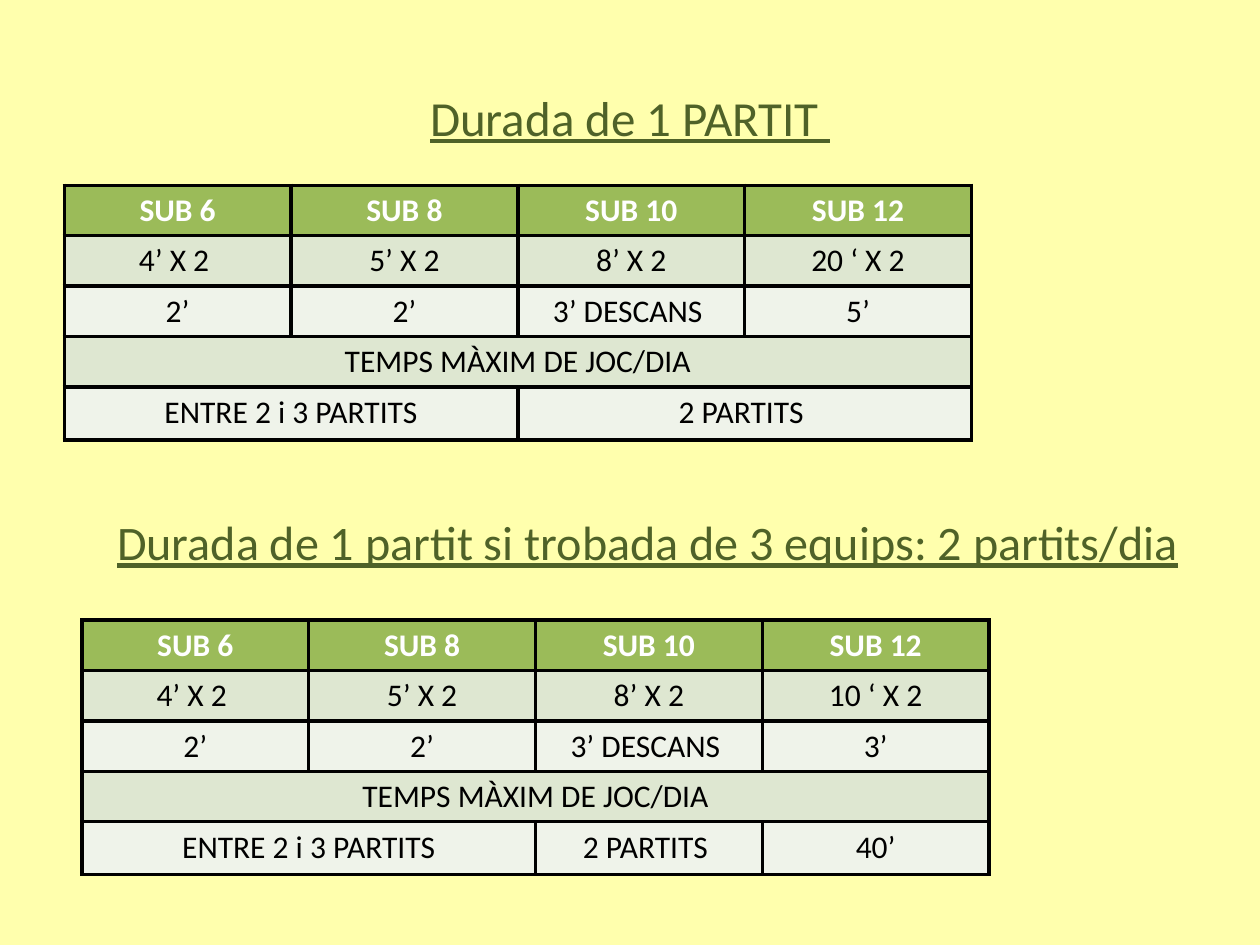
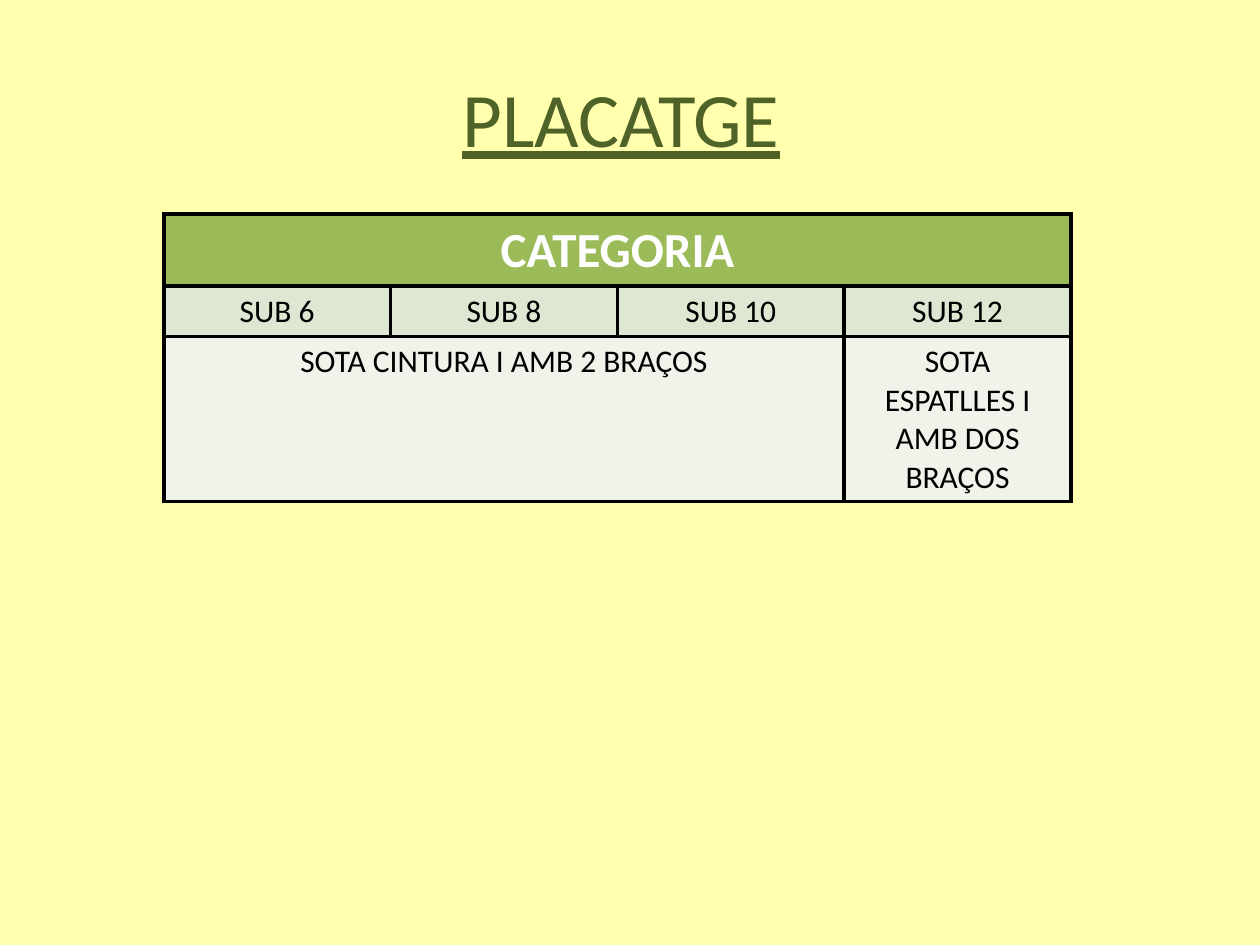
from dataclasses import dataclass

from lxml import etree
from pptx import Presentation
from pptx.dml.color import RGBColor
from pptx.enum.text import MSO_ANCHOR, PP_ALIGN
from pptx.oxml.ns import qn
from pptx.util import Inches, Pt

CENTER = PP_ALIGN.CENTER
MIDDLE = MSO_ANCHOR.MIDDLE

FONT = "Calibri"
BACKGROUND = "FFFFAD"
TITLE_COLOR = "4F6228"
HEADER_FILL = "9BBB59"
BAND_FILLS = ("EFF3EA", "DEE7D1")  # even rows, odd rows
HEADER_TEXT = "FFFFFF"
BODY_TEXT = "000000"
BORDER_COLOR = "000000"
BORDER_WIDTH = 2.25
BODY_SIZE = 18
COLUMN_WIDTH = 1.8

CATEGORIES = ["SUB 6", "SUB 8", "SUB 10", "SUB 12"]
Row = list[str | None]  # None continues the cell on its left


@dataclass
class Heading:
    text: str
    left: float
    top: float
    size: float


@dataclass
class Grid:
    left: float
    top: float
    row_heights: list[float]
    rows: list[Row]
    header_size: float = BODY_SIZE


def rgb(color: str) -> RGBColor:
    return RGBColor.from_string(color)


def style_paragraph(paragraph, size: float, color: str, bold: bool = False, underline: bool = False) -> None:
    paragraph.alignment = CENTER
    font = paragraph.font
    font.name = FONT
    font.size = Pt(size)
    font.bold = bold
    font.underline = underline
    font.color.rgb = rgb(color)


def add_heading(slide, heading: Heading) -> None:
    shape = slide.shapes.add_textbox(Inches(heading.left), Inches(heading.top), Inches(9), Inches(1.25))
    frame = shape.text_frame
    frame.word_wrap = True
    frame.vertical_anchor = MIDDLE
    frame.text = heading.text
    style_paragraph(frame.paragraphs[0], heading.size, TITLE_COLOR, underline=True)


def add_borders(cell) -> None:
    properties = cell._tc.get_or_add_tcPr()
    for side in ("a:lnL", "a:lnR", "a:lnT", "a:lnB"):
        line = etree.SubElement(properties, qn(side), w=str(Pt(BORDER_WIDTH)))
        fill = etree.SubElement(line, qn("a:solidFill"))
        etree.SubElement(fill, qn("a:srgbClr"), val=BORDER_COLOR)


def add_grid(slide, grid: Grid) -> None:
    column_count = len(CATEGORIES)
    table = slide.shapes.add_table(
        len(grid.rows), column_count, Inches(grid.left), Inches(grid.top),
        Inches(COLUMN_WIDTH * column_count), Inches(sum(grid.row_heights)),
    ).table
    for column in table.columns:
        column.width = Inches(COLUMN_WIDTH)

    for row_index, (height, texts) in enumerate(zip(grid.row_heights, grid.rows)):
        table.rows[row_index].height = Inches(height)
        is_header = row_index == 0
        fill = HEADER_FILL if is_header else BAND_FILLS[row_index % 2]
        size = grid.header_size if is_header else BODY_SIZE
        color = HEADER_TEXT if is_header else BODY_TEXT
        origin = table.cell(row_index, 0)
        for column_index, text in enumerate(texts):
            cell = table.cell(row_index, column_index)
            add_borders(cell)
            cell.fill.solid()
            cell.fill.fore_color.rgb = rgb(fill)
            if text is not None:
                origin = cell
                cell.text = text
            style_paragraph(cell.text_frame.paragraphs[0], size, color, bold=is_header)
            # Merge once the run of continued cells ends
            next_text = texts[column_index + 1] if column_index + 1 < column_count else ""
            if text is None and next_text is not None:
                origin.merge(cell)


def duration_grid(left: float, top: float, sub12_time: str, sub12_rest: str, daily_limit: Row) -> Grid:
    return Grid(left, top, [0.4] * 4 + [0.42], [
        CATEGORIES,
        ["4’ X 2 ", "5’ X 2", "8’ X 2", sub12_time],
        ["2’", "2’", "3’ DESCANS ", sub12_rest],
        ["TEMPS MÀXIM DE JOC/DIA", None, None, None],
        ["ENTRE 2 i 3 PARTITS", None, *daily_limit],
    ])


def add_slide(presentation, headings: list[Heading], grids: list[Grid]) -> None:
    slide = presentation.slides.add_slide(presentation.slide_layouts[6])
    slide.background.fill.solid()
    slide.background.fill.fore_color.rgb = rgb(BACKGROUND)
    for heading in headings:
        add_heading(slide, heading)
    for grid in grids:
        add_grid(slide, grid)


def main() -> None:
    presentation = Presentation()
    presentation.slide_width = Inches(10)
    presentation.slide_height = Inches(7.5)

    # Match duration
    add_slide(
        presentation,
        [
            Heading("Durada de 1 PARTIT ", 0.5, 0.3, 28),
            Heading("Durada de 1 partit si trobada de 3 equips: 2 partits/dia", 0.64, 3.67, 27.5),
        ],
        [
            duration_grid(0.51, 1.47, " 20 ‘ X 2 ", "5’", ["2 PARTITS ", None]),
            duration_grid(0.65, 4.92, " 10 ‘ X 2 ", "3’", ["2 PARTITS ", "40’"]),
        ],
    )

    # Tackling rules
    tackle_grid = Grid(1.3, 1.7, [0.57, 0.4, 1.31], [
        ["CATEGORIA", None, None, None],
        CATEGORIES,
        ["SOTA CINTURA I AMB 2 BRAÇOS", None, None, "SOTA ESPATLLES I AMB DOS BRAÇOS"],
    ], header_size=28)
    add_slide(presentation, [Heading("PLACATGE", 0.43, 0.3, 44)], [tackle_grid])

    presentation.save("out.pptx")


if __name__ == "__main__":
    main()
